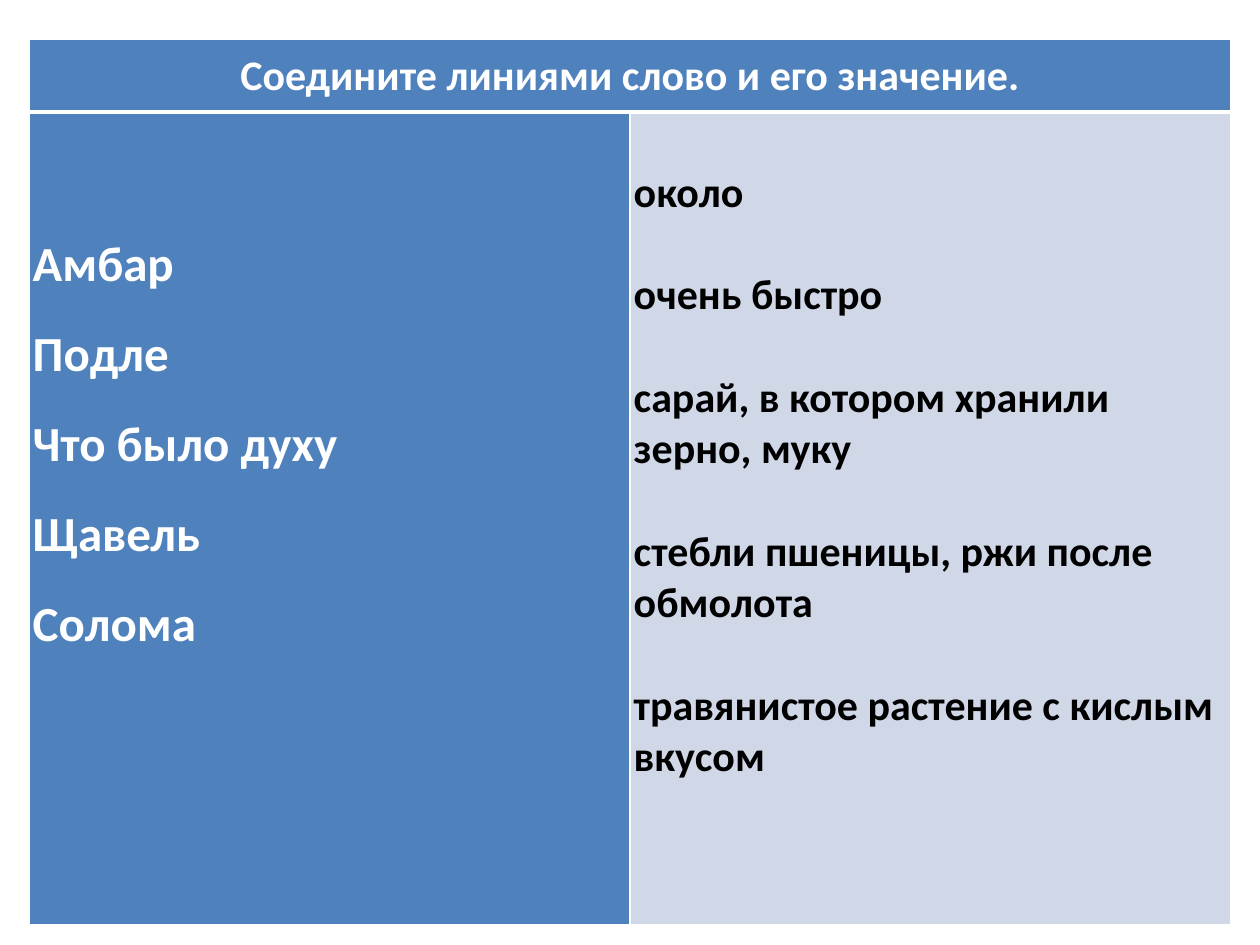
"""Build a slide with a word-and-meaning matching exercise in a table."""
from lxml.etree import SubElement
from pptx import Presentation
from pptx.dml.color import RGBColor
from pptx.enum.text import PP_ALIGN
from pptx.oxml.ns import qn
from pptx.util import Inches, Pt

HEADING = "Соедините линиями слово и его значение."
WORDS = ["Амбар", "Подле", "Что было духу", "Щавель", "Солома"]
MEANINGS = [
    "около",
    "очень быстро",
    "сарай, в котором хранили зерно, муку",
    "стебли пшеницы, ржи после обмолота",
    "травянистое растение с кислым вкусом",
]

BLUE = RGBColor(0x4F, 0x81, 0xBD)
PALE = RGBColor(0xD0, 0xD8, 0xE8)
WHITE = RGBColor(0xFF, 0xFF, 0xFF)
BLACK = RGBColor(0x00, 0x00, 0x00)

LEFT, TOP = 0.23, 0.31
COLUMN_WIDTH = 4.77
ROW_HEIGHTS = [0.58, 6.45]
INSET = 0.03


def set_borders(cell, bottom=1):
    properties = cell._tc.get_or_add_tcPr()
    widths = {"a:lnL": 1, "a:lnR": 1, "a:lnT": 1, "a:lnB": bottom}
    for position, (side, width) in enumerate(widths.items()):
        line = SubElement(properties, qn(side), w=str(Pt(width)))
        fill = SubElement(line, qn("a:solidFill"))
        SubElement(fill, qn("a:srgbClr"), val=str(WHITE))
        properties.insert(position, line)


def fill_cell(cell, lines, size, color, background, spacing=1.0, gap=0,
              top=INSET, align=PP_ALIGN.LEFT):
    cell.fill.solid()
    cell.fill.fore_color.rgb = background
    cell.margin_left = cell.margin_right = cell.margin_bottom = Inches(INSET)
    cell.margin_top = Inches(top)
    cell.text = "\n".join(lines)
    for paragraph in cell.text_frame.paragraphs:
        paragraph.alignment = align
        paragraph.line_spacing = spacing
        paragraph.space_after = Pt(gap)
        font = paragraph.font
        font.name, font.size, font.bold = "Calibri", Pt(size), True
        font.color.rgb = color


def main():
    presentation = Presentation()
    presentation.slide_width, presentation.slide_height = Inches(10), Inches(7.5)
    slide = presentation.slides.add_slide(presentation.slide_layouts[6])
    exercise = slide.shapes.add_table(
        2, 2, Inches(LEFT), Inches(TOP),
        Inches(2 * COLUMN_WIDTH), Inches(sum(ROW_HEIGHTS))).table
    exercise.first_col = True
    for column in exercise.columns:
        column.width = Inches(COLUMN_WIDTH)
    for row, height in zip(exercise.rows, ROW_HEIGHTS):
        row.height = Inches(height)

    heading, heading_end = exercise.cell(0, 0), exercise.cell(0, 1)
    words, meanings = exercise.cell(1, 0), exercise.cell(1, 1)
    heading.merge(heading_end)
    fill_cell(heading, [HEADING], 24, WHITE, BLUE, spacing=1.15,
              align=PP_ALIGN.CENTER)
    fill_cell(words, WORDS, 28, WHITE, BLUE, spacing=1.5, top=0.74)
    fill_cell(meanings, MEANINGS, 24, BLACK, PALE, gap=29.3, top=0.44)
    for cell in (heading, heading_end):
        set_borders(cell, bottom=3)
    for cell in (words, meanings):
        set_borders(cell)
    presentation.save("out.pptx")


if __name__ == "__main__":
    main()
